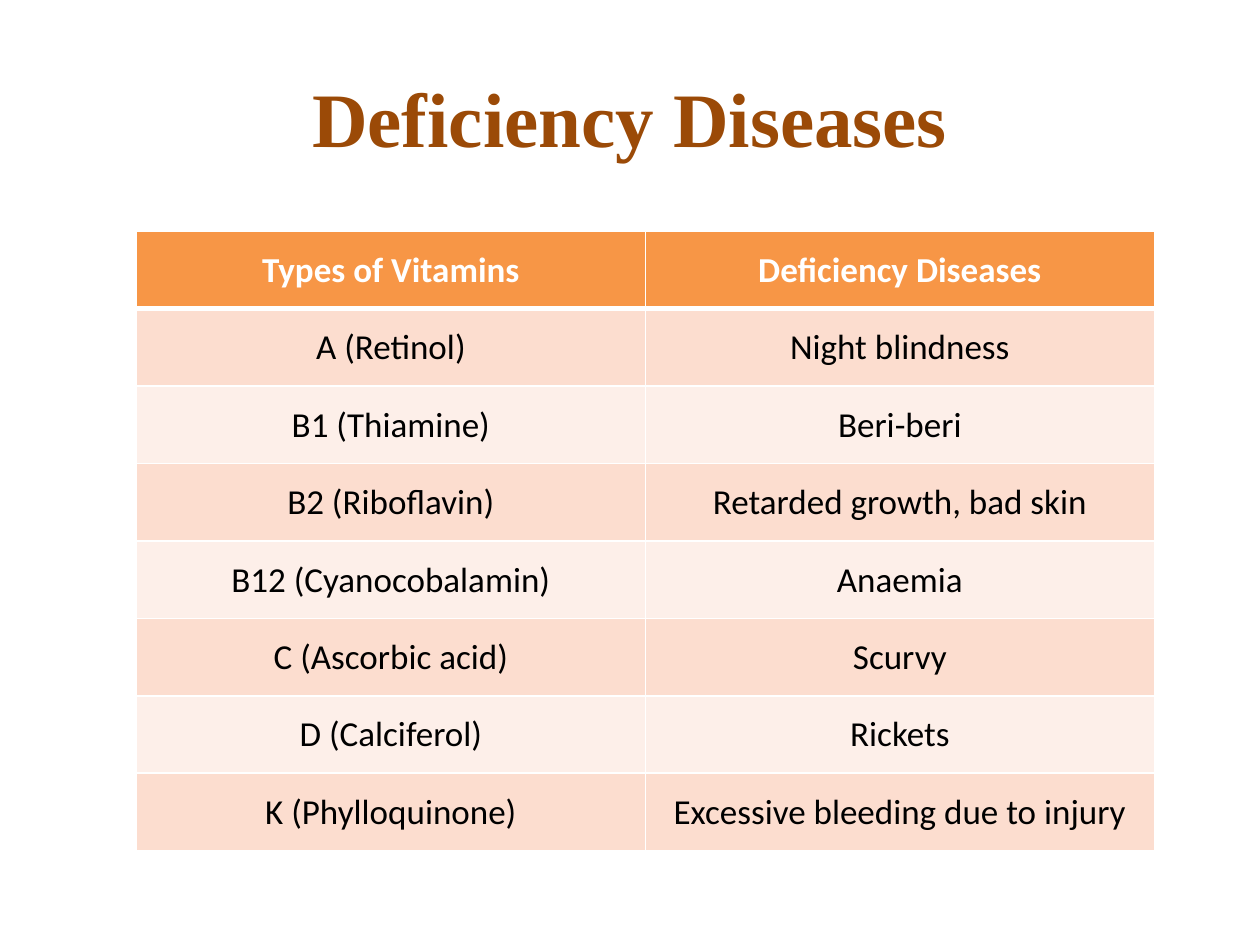
"""Build the slide that pairs vitamins with their deficiency diseases."""
import dataclasses

import pptx
import pptx.dml.color
import pptx.enum.text
import pptx.oxml
import pptx.oxml.ns
import pptx.util

Cm = pptx.util.Cm
Pt = pptx.util.Pt

ROWS = [
    ("Types of Vitamins", "Deficiency Diseases"),
    ("A (Retinol)", "Night blindness"),
    ("B1 (Thiamine)", "Beri-beri"),
    ("B2 (Riboflavin)", "Retarded growth, bad skin"),
    ("B12 (Cyanocobalamin)", "Anaemia"),
    ("C (Ascorbic acid)", "Scurvy"),
    ("D (Calciferol)", "Rickets"),
    ("K (Phylloquinone)", "Excessive bleeding due to injury"),
]


@dataclasses.dataclass(frozen=True)
class Theme:
    title_font: str = "Times New Roman"
    body_font: str = "Calibri"
    title_size: int = 44
    body_size: int = 20
    title: str = "9B4A07"
    header: str = "F79646"
    bands: tuple = ("FCDDCF", "FDEFE9")
    text: str = "000000"
    white: str = "FFFFFF"
    rule: int = 1
    header_rule: int = 3


def rgb(value):
    return pptx.dml.color.RGBColor.from_string(value)


def write(tf, text, *, font, size, color, bold=False, spacing=None):
    p = tf.paragraphs[0]
    p.alignment = pptx.enum.text.PP_ALIGN.CENTER
    p.line_spacing = spacing
    r = p.add_run()
    r.text = text
    r.font.name = font
    r.font.size = Pt(size)
    r.font.bold = bold
    r.font.color.rgb = rgb(color)


@dataclasses.dataclass
class SlideBuilder:
    s: object
    theme: Theme

    def title(self, text, left, top, width, height):
        sp = self.s.shapes.add_textbox(left, top, width, height)
        tf = sp.text_frame
        tf.word_wrap = True
        tf.vertical_anchor = pptx.enum.text.MSO_ANCHOR.MIDDLE
        write(tf, text, font=self.theme.title_font, size=self.theme.title_size,
              color=self.theme.title, bold=True)

    def table(self, rows, left, top, width, height):
        frame = self.s.shapes.add_table(len(rows), len(rows[0]), left, top, width, height)
        for i, row in enumerate(rows):
            for j, text in enumerate(row):
                self.cell(frame.table.cell(i, j), text, i)

    def cell(self, cell, text, row):
        t = self.theme
        header = row == 0
        cell.margin_left = cell.margin_right = Cm(0.23)
        cell.margin_top = cell.margin_bottom = Cm(0.23)
        cell.fill.solid()
        cell.fill.fore_color.rgb = rgb(t.header if header else t.bands[(row - 1) % 2])
        write(cell.text_frame, text, font=t.body_font, size=t.body_size,
              color=t.white if header else t.text, bold=header, spacing=1.15)
        self.borders(cell, {
            "L": t.rule,
            "R": t.rule,
            "T": t.header_rule if row == 1 else t.rule,
            "B": t.header_rule if header else t.rule,
        })

    def borders(self, cell, widths):
        tc_pr = cell._tc.get_or_add_tcPr()
        ns = pptx.oxml.ns.nsdecls("a")
        for i, (side, width) in enumerate(widths.items()):
            tc_pr.insert(i, pptx.oxml.parse_xml(
                f'<a:ln{side} {ns} w="{Pt(width)}"><a:solidFill>'
                f'<a:srgbClr val="{self.theme.white}"/></a:solidFill></a:ln{side}>'))


def main():
    prs = pptx.Presentation()
    prs.slide_width, prs.slide_height = Cm(25.4), Cm(19.05)
    s = prs.slides.add_slide(prs.slide_layouts[6])
    builder = SlideBuilder(s, Theme())
    builder.title("Deficiency Diseases", Cm(1.27), Cm(0.76), Cm(22.86), Cm(3.18))
    builder.table(ROWS, Cm(2.75), Cm(4.66), Cm(20.52), Cm(12.49))
    prs.save("out.pptx")


if __name__ == "__main__":
    main()
